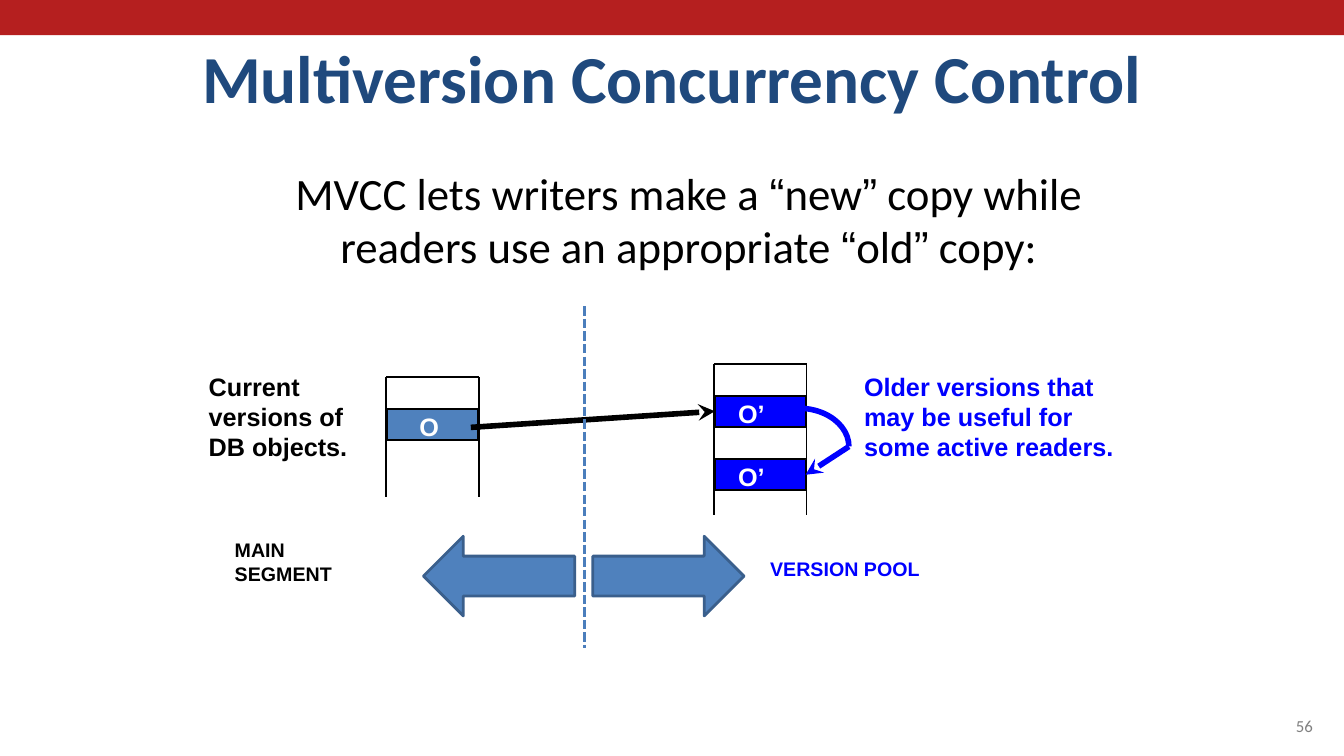
from pptx import Presentation
from pptx import util as u
from pptx.dml.color import RGBColor
from pptx.enum import dml, shapes, text
from pptx.oxml.ns import qn
from lxml import etree

COLORS = {"band": "B51F1F", "title": "1F497D", "black": "000000", "white": "FFFFFF",
          "blue": "0000FF", "steel": "4F81BD", "edge": "3A5F8C", "divider": "4B7EBC",
          "gray": "808080"}
SNUG = (0.09, 0.04)
RECT = shapes.MSO_SHAPE.RECTANGLE


def rgb(name):
    return RGBColor.from_string(COLORS[name])


class Deck:
    def __init__(self):
        self.prs = Presentation()
        self.prs.slide_width, self.prs.slide_height = u.Inches(13.33), u.Inches(7.5)
        self.s = self.prs.slides.add_slide(self.prs.slide_layouts[6])

    def shape(self, kind, box, fill=None, line=None, width=1):
        sp = self.s.shapes.add_shape(kind, *map(u.Inches, box))
        sp.shadow.inherit = False
        if fill:
            sp.fill.solid()
            sp.fill.fore_color.rgb = rgb(fill)
        else:
            sp.fill.background()
        if line:
            sp.line.color.rgb = rgb(line)
            sp.line.width = u.Pt(width)
        else:
            sp.line.fill.background()
        return sp

    def line(self, start, end, color="black", width=1, stealth=False):
        cn = self.s.shapes.add_connector(shapes.MSO_CONNECTOR.STRAIGHT,
                                         *map(u.Inches, start + end))
        cn.line.color.rgb = rgb(color)
        cn.line.width = u.Pt(width)
        if stealth:
            etree.SubElement(cn.line._get_or_add_ln(), qn("a:tailEnd"), type="stealth")
        etree.SubElement(cn._element.spPr, qn("a:effectLst"))
        return cn

    def text(self, box, paragraphs, size, color="black", font="Arial", bold=True,
             align="LEFT", anchor="TOP", inset=(0.1, 0.05), wrap=False):
        """Each paragraph is a string or a list of (string, font) runs."""
        tf = self.s.shapes.add_textbox(*map(u.Inches, box)).text_frame
        x, y = map(u.Inches, inset)
        frame = {"word_wrap": wrap, "margin_left": x, "margin_right": x,
                 "margin_top": y, "margin_bottom": y,
                 "vertical_anchor": getattr(text.MSO_ANCHOR, anchor)}
        for key, value in frame.items():
            setattr(tf, key, value)
        for i, runs in enumerate(paragraphs):
            p = tf.add_paragraph() if i else tf.paragraphs[0]
            p.alignment = getattr(text.PP_ALIGN, align)
            for words, face in [(runs, font)] if isinstance(runs, str) else runs:
                r = p.add_run()
                r.text = words
                for key, value in {"size": u.Pt(size), "name": face, "bold": bold}.items():
                    setattr(r.font, key, value)
                r.font.color.rgb = rgb(color)

    def column(self, left, top, bottom, rules):
        """Open-ended storage column with evenly spaced rules."""
        right = left + 0.92
        for x in (left, right):
            self.line((x, top), (x, bottom))
        for i in range(rules):
            y = top + i * 0.313
            self.line((left, y), (right, y))


def main():
    d = Deck()

    # Header
    d.shape(RECT, (0, 0, 13.33, 0.35), "band")
    d.text((0, 0.27, 13.33, 0.94), ["Multiversion Concurrency Control"], 48, "title",
           "Calibri", align="CENTER", anchor="BOTTOM", inset=(0, 0.05), wrap=True)

    # Statement, with quotation marks in Arial
    pieces = ["MVCC lets writers make a ", "“", "new", "”",
              " copy while readers use an appropriate ", "“", "old", "”", " copy:"]
    runs = [(t, "Arial" if t in "“”" else "Calibri") for t in pieces]
    d.text((2.58, 1.6, 8.5, 1.58), [runs], 32, bold=False, align="CENTER",
           inset=SNUG, wrap=True)

    # Storage columns and object versions
    d.column(3.83, 3.74, 4.93, 3)
    d.column(7.08, 3.61, 5.11, 5)
    versions = [("O", 3.84, 4.06, "steel", 0.23), ("O’", 7.09, 3.93, "blue", 0.14),
                ("O’’", 7.09, 4.56, "blue", 0.14)]
    cells = [d.shape(RECT, (x, y, 0.9, 0.3), fill, "black")
             for _, x, y, fill, _ in versions]
    for name, x, y, _, indent in versions:
        d.text((x + indent, y - 0.02, 0.5, 0.39), [name], 18, "white", inset=SNUG)

    # Links from each version to the older one
    link = d.line((4.67, 4.24), (7.08, 4.05), width=4, stealth=True)
    link.end_connect(cells[1], 1)
    d.shape(shapes.MSO_SHAPE.ARC, (7.42, 4.05, 1, 0.76), None, "blue", 4)
    link = d.line((8.42, 4.43), (8, 4.74), "blue", 4, stealth=True)
    link.end_connect(cells[2], 3)

    # Captions
    d.text((1.98, 3.64, 1.58, 1), ["Current", "versions of", "DB objects."], 18,
           inset=SNUG)
    d.text((8.48, 3.64, 2.76, 1),
           ["Older versions that", "may be useful for", "some active readers."], 18,
           "blue", inset=SNUG)

    # Divider and the two segments
    divider = d.line((5.8, 3.04), (5.8, 6.43), "divider", 2.25)
    divider.line.dash_style = dml.MSO_LINE.SQUARE_DOT
    for kind, x in ((shapes.MSO_SHAPE.RIGHT_ARROW, 5.88), (shapes.MSO_SHAPE.LEFT_ARROW, 4.2)):
        d.shape(kind, (x, 5.32, 1.5, 0.79), "steel", "edge", 2)
    d.text((2.23, 5.29, 1.5, 0.57), ["MAIN", "SEGMENT"], 14, wrap=True)
    d.text((7.54, 5.48, 1.7, 0.34), ["VERSION POOL"], 14, "blue")

    # Slide number
    d.text((9.56, 6.83, 3.56, 0.52), ["56"], 12, "gray", "Calibri", False, "RIGHT",
           "BOTTOM", wrap=True)

    d.prs.save("out.pptx")


if __name__ == "__main__":
    main()
